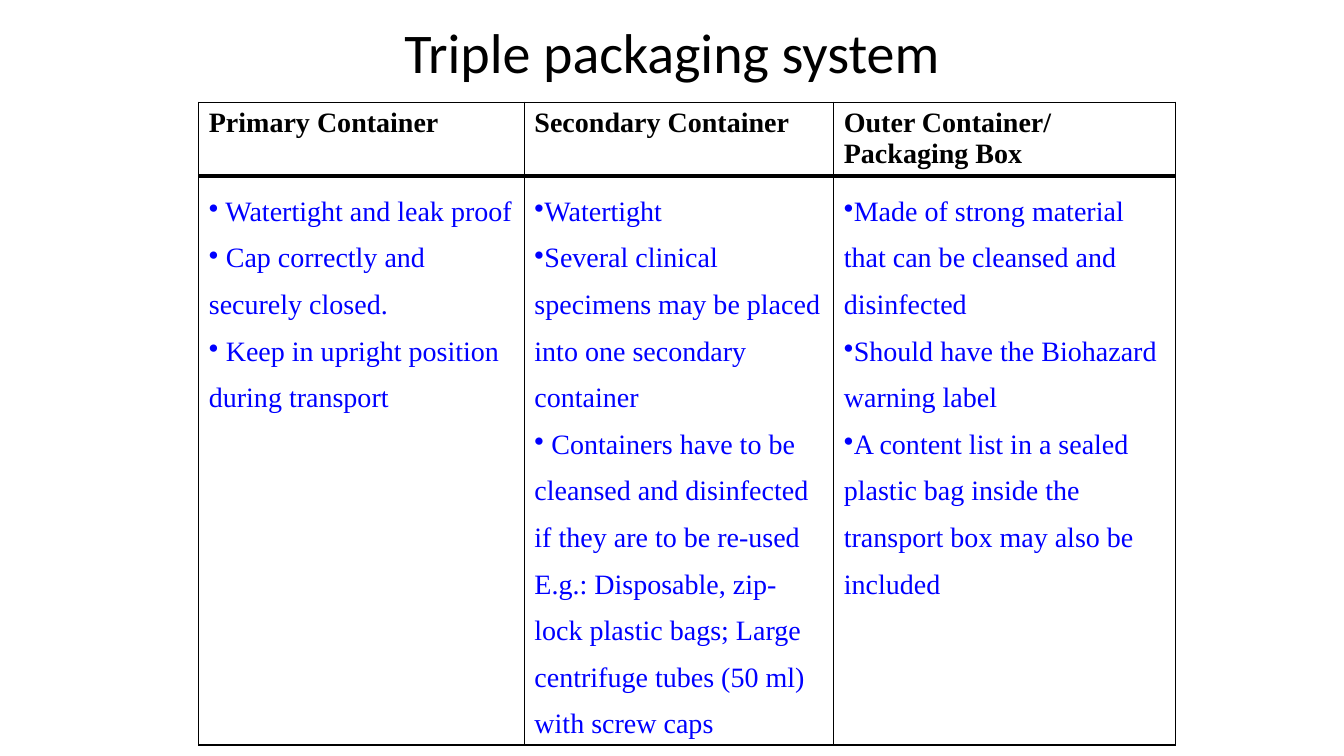
from lxml import etree
from pptx import Presentation
from pptx import util as u
from pptx.dml import color
from pptx.enum import text
from pptx.oxml import ns

Pt = u.Pt
HUE = {"ink": "000000", "list": "0000FF"}
HEADS = [["Primary Container"], ["Secondary Container"],
         ["Outer Container/", "Packaging Box"]]
LISTS = [
    ["• Watertight and leak proof",
     "• Cap correctly and securely closed.",
     "• Keep in upright position during transport"],
    ["•Watertight",
     "•Several clinical specimens may be placed into one secondary container",
     "• Containers have to be cleansed and disinfected if they are to be re-used",
     "E.g.: Disposable, zip-lock plastic bags; Large centrifuge tubes (50 ml) "
     "with screw caps"],
    ["•Made of strong material that can be cleansed and disinfected",
     "•Should have the Biohazard warning label",
     "•A content list in a sealed plastic bag inside the transport box may also "
     "be included"],
]


def write(frame, lines, font="Times New Roman", size=20, hue="ink",
          bold=False, space=None, align=None):
    """Fill a text frame with lines, turning a leading dot into a bullet."""
    for i, line in enumerate(lines):
        para = frame.paragraphs[0] if i == 0 else frame.add_paragraph()
        para.alignment = align
        para.line_spacing = space
        if line.startswith("•"):
            line = line[1:]
            props = para._p.get_or_add_pPr()
            props.set("marL", "0")
            props.set("indent", "0")
            etree.SubElement(props, ns.qn("a:buChar")).set("char", "•")
        run = para.add_run()
        run.text = line
        run.font.name = font
        run.font.size = Pt(size)
        run.font.bold = bold
        run.font.color.rgb = color.RGBColor.from_string(HUE[hue])


def edge(cell, top, base):
    """Draw the four borders of a cell and clear its fill."""
    props = cell._tc.get_or_add_tcPr()
    for side, width in zip("LRTB", (1, 1, top, base)):
        line = etree.SubElement(props, ns.qn(f"a:ln{side}"), w=str(Pt(width)))
        fill = etree.SubElement(line, ns.qn("a:solidFill"))
        etree.SubElement(fill, ns.qn("a:srgbClr"), val=HUE["ink"])
    cell.fill.background()


def title(slide, x, y, w, h):
    """Place the title in its box."""
    box = slide.shapes.title
    box.left, box.top, box.width, box.height = Pt(x), Pt(y), Pt(w), Pt(h)
    box.text_frame.vertical_anchor = text.MSO_ANCHOR.MIDDLE
    write(box.text_frame, ["Triple packaging system"], font="Calibri", size=40,
          space=0.9, align=text.PP_ALIGN.CENTER)


def grid(slide, x, y, w, h):
    """Place the container table in its box."""
    table = slide.shapes.add_table(2, 3, Pt(x), Pt(y), Pt(w), Pt(h)).table
    table.first_row = table.horz_banding = False
    head = 52.6
    for row, tall in zip(table.rows, (head, h - head)):
        row.height = Pt(tall)
    first, second = 232.6, 221
    for col, wide in zip(table.columns, (first, second, w - first - second)):
        col.width = Pt(wide)
    for i, (name, items) in enumerate(zip(HEADS, LISTS)):
        top, body = table.cell(0, i), table.cell(1, i)
        write(top.text_frame, name, bold=True)
        write(body.text_frame, items, hue="list", space=1.5)
        edge(top, 1, 3)
        edge(body, 3, 1)


def main():
    """Build the slide and save it."""
    deck = Presentation()
    deck.slide_width, deck.slide_height = Pt(960), Pt(540)
    slide = deck.slides.add_slide(deck.slide_layouts[5])
    title(slide, 156, 3.6, 648, 72)
    grid(slide, 142, 73, 698, 432.8)
    deck.save("out.pptx")


if __name__ == "__main__":
    main()
